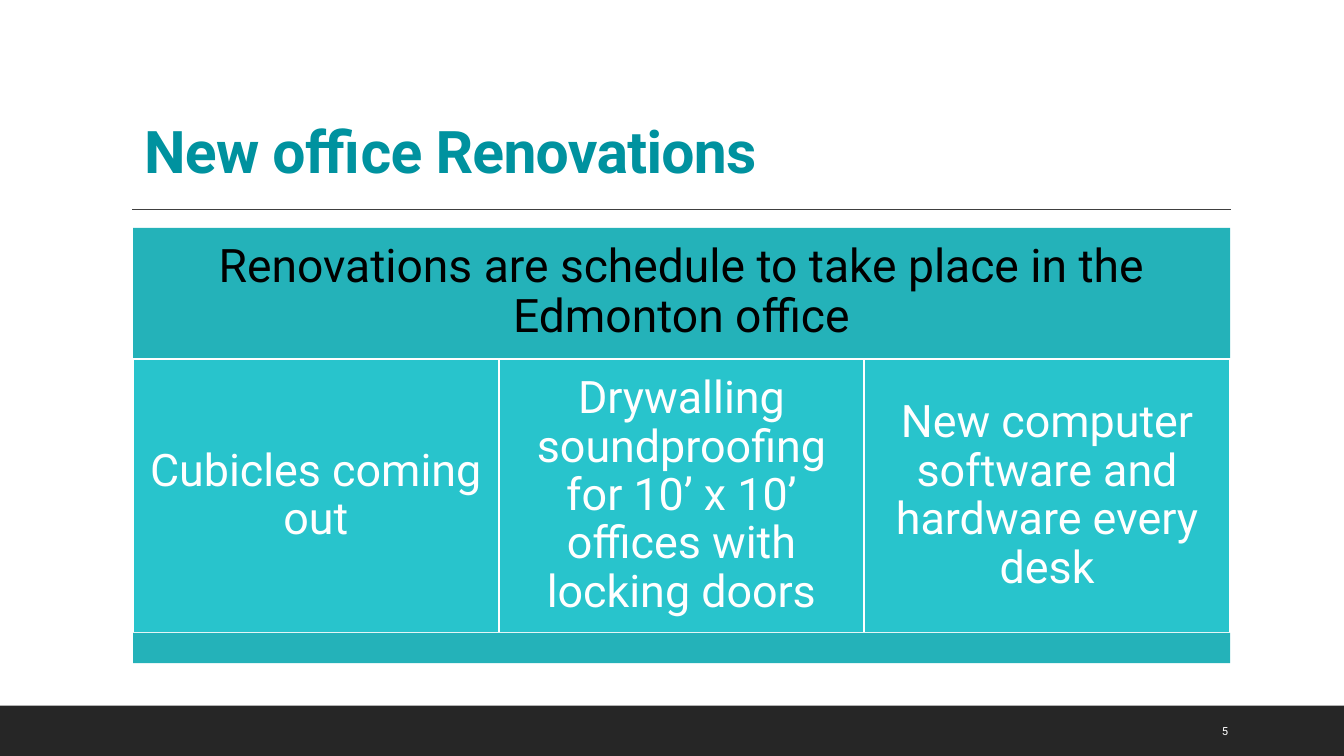
import pptx
import pptx.dml.color
import pptx.enum.shapes
import pptx.enum.text
import pptx.oxml.ns
import pptx.util
from lxml import etree

Inches = pptx.util.Inches
Pt = pptx.util.Pt
RGBColor = pptx.dml.color.RGBColor
ALIGN = pptx.enum.text.PP_ALIGN
ANCHOR = pptx.enum.text.MSO_ANCHOR

WHITE = RGBColor(0xFF, 0xFF, 0xFF)
BLACK = RGBColor(0, 0, 0)
FOOTER = RGBColor(0x26, 0x26, 0x26)
RULE = RGBColor(0x40, 0x40, 0x40)
TITLE = RGBColor(0x00, 0x92, 0x9F)
BAND = RGBColor(0x24, 0xB2, 0xB9)
CELL = RGBColor(0x28, 0xC4, 0xCC)

LEFT, WIDTH = 1.32, 10.88
TASKS = [
    "Cubicles coming out",
    "Drywalling soundproofing for 10’ x 10’ offices with locking doors",
    "New computer software and hardware every desk",
]


def write(shape, text, size=32, color=WHITE, bold=False, align=ALIGN.CENTER,
          anchor=ANCHOR.MIDDLE, inset=(0.13, 0.13, 0.13, 0.13), leading=0.9,
          track=None):
    frame = shape.text_frame
    frame.word_wrap = True
    frame.vertical_anchor = anchor
    (frame.margin_left, frame.margin_top, frame.margin_right,
     frame.margin_bottom) = map(Inches, inset)
    para = frame.paragraphs[0]
    para.alignment = align
    para.line_spacing = leading
    run = para.add_run()
    run.text = text
    run.font.name = "Roboto"
    run.font.size = Pt(size)
    run.font.bold = bold
    run.font.color.rgb = color
    if track is not None:
        run.font._element.set("spc", str(round(track * 100)))


def add_box(slide, x, y, w, h, fill, line=None):
    box = slide.shapes.add_shape(
        pptx.enum.shapes.MSO_SHAPE.RECTANGLE,
        Inches(x), Inches(y), Inches(w), Inches(h))
    box.shadow.inherit = False
    box.fill.solid()
    box.fill.fore_color.rgb = fill
    if line is None:
        box.line.fill.background()
    else:
        box.line.color.rgb = line
        box.line.width = Pt(1.25)
    return box


def add_label(slide, x, y, w, h, text, **style):
    label = slide.shapes.add_textbox(Inches(x), Inches(y), Inches(w), Inches(h))
    write(label, text, align=ALIGN.LEFT, **style)


def add_rule(slide, x, y, end):
    rule = slide.shapes.add_connector(
        pptx.enum.shapes.MSO_CONNECTOR.STRAIGHT,
        Inches(x), Inches(y), Inches(end), Inches(y))
    rule.line.color.rgb = RULE
    rule.line.width = Pt(1)
    etree.SubElement(rule._element.spPr, pptx.oxml.ns.qn("a:effectLst"))


def main():
    deck = pptx.Presentation()
    deck.slide_width = Inches(13.33)
    deck.slide_height = Inches(7.5)
    slide = deck.slides.add_slide(deck.slide_layouts[6])

    add_box(slide, 0, 7, 13.33, 0.5, FOOTER)
    add_rule(slide, 1.31, 2.08, 12.21)
    add_label(slide, 1.2, 0.31, 11, 1.59, "New office Renovations", size=42,
              color=TITLE, bold=True, anchor=ANCHOR.BOTTOM,
              inset=(0.23, 0.05, 0.1, 0.05), track=-0.5)

    header = add_box(slide, LEFT, 2.26, WIDTH, 1.29, BAND)
    write(header, "Renovations are schedule to take place in the Edmonton office",
          size=33, color=BLACK, inset=(0.14, 0.14, 0.14, 0.14))
    step = WIDTH / len(TASKS)
    for i, task in enumerate(TASKS):
        cell = add_box(slide, LEFT + i * step, 3.56, step, 2.72, CELL, WHITE)
        write(cell, task)
    add_box(slide, LEFT, 6.28, WIDTH, 0.3, BAND)

    add_label(slide, 12.02, 7.05, 0.85, 0.4, "5", size=8,
              inset=(0.1, 0.05, 0.1, 0.05), leading=1.0)
    deck.save("out.pptx")


if __name__ == "__main__":
    main()
